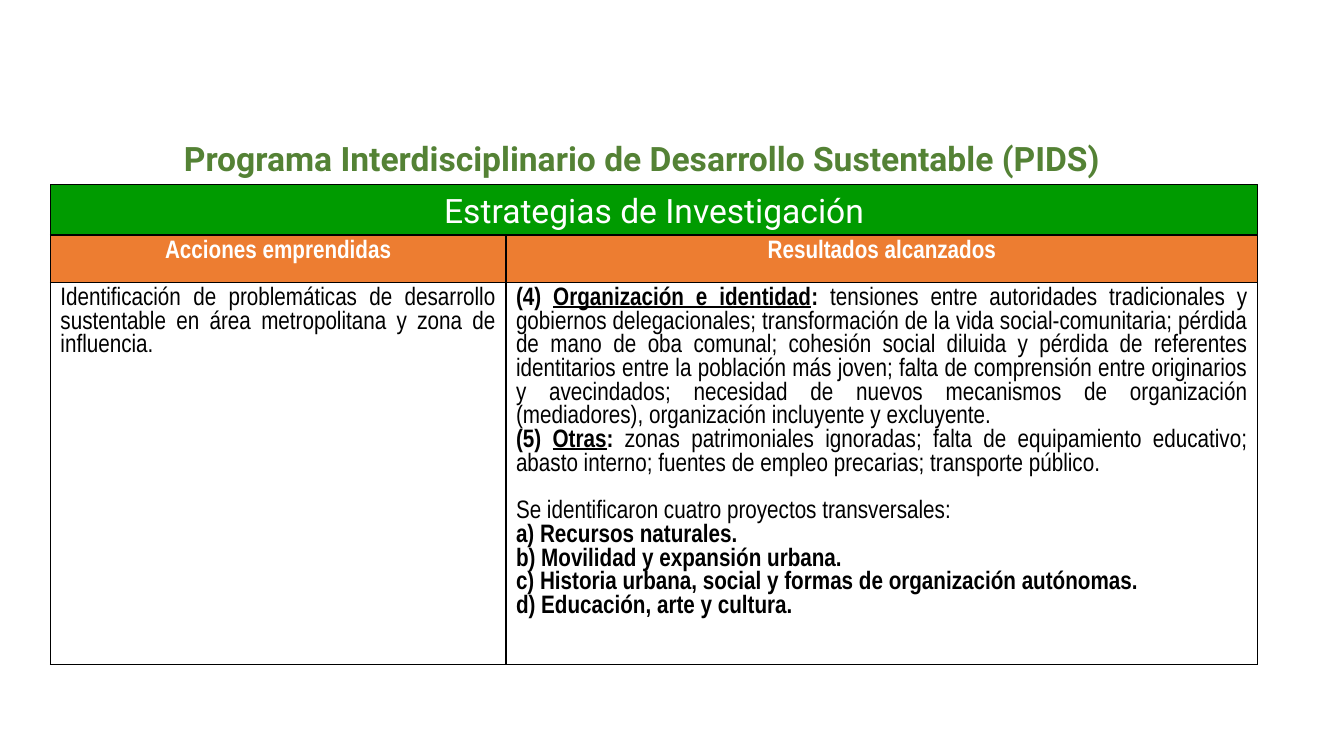
"""Build the PIDS slide: a title, a green banner and a table of actions and results."""
from pptx import Presentation
from pptx.dml.color import RGBColor
from pptx.enum.shapes import MSO_SHAPE
from pptx.enum.text import PP_ALIGN, MSO_ANCHOR
from pptx.oxml import parse_xml
from pptx.oxml.ns import nsdecls
from pptx.util import Cm, Pt

TITLE = "Programa Interdisciplinario de Desarrollo Sustentable (PIDS)"
BANNER = "Estrategias de Investigación"
HEADERS = ["Acciones emprendidas", "Resultados alcanzados"]
ACTIONS = ["Identificación de problemáticas de desarrollo sustentable en área "
           "metropolitana y zona de influencia."]
FINDINGS = [
    ("(4) ", "Organización e identidad",
     "tensiones entre autoridades tradicionales y gobiernos delegacionales; "
     "transformación de la vida social-comunitaria; pérdida de mano de oba comunal; "
     "cohesión social diluida y pérdida de referentes identitarios entre la población "
     "más joven; falta de comprensión entre originarios y avecindados; necesidad de "
     "nuevos mecanismos de organización (mediadores), organización incluyente y "
     "excluyente."),
    ("(5) ", "Otras",
     "zonas patrimoniales ignoradas; falta de equipamiento educativo; abasto interno; "
     "fuentes de empleo precarias; transporte público."),
]
PROJECTS_INTRO = "Se identificaron cuatro proyectos transversales:"
PROJECTS = [
    "a) Recursos naturales.",
    "b) Movilidad y expansión urbana.",
    "c) Historia urbana, social y formas de organización autónomas.",
    "d) Educación, arte y cultura.",
]

THEME = {
    "title": RGBColor(0x54, 0x82, 0x35), "banner": RGBColor(0x00, 0x9B, 0x00),
    "header": RGBColor(0xED, 0x7D, 0x31), "white": RGBColor(0xFF, 0xFF, 0xFF),
    "black": RGBColor(0, 0, 0), "display": "Roboto", "body": "Arial Narrow",
    "display_size": Pt(24), "body_size": Pt(18), "gap": Pt(16.9),
}

LEFT, BANNER_TOP, BANNER_H = Cm(1.27), Cm(4.65), Cm(1.27)
COLS = [Cm(11.48), Cm(18.95)]
ROWS = [Cm(1.19), Cm(9.63)]
WIDTH = sum(COLS)


def style(p, face, color, align, bold=False):
    """Set one paragraph's alignment and font from the theme."""
    p.alignment = align
    p.font.name, p.font.size = THEME[face], THEME[face + "_size"]
    p.font.color.rgb, p.font.bold = THEME[color], bold


def heading(sp, text, color, bold=False):
    """Fill a shape with one centred line of display type."""
    tf = sp.text_frame
    tf.word_wrap, tf.vertical_anchor = True, MSO_ANCHOR.TOP
    p = tf.paragraphs[0]
    p.text = text
    style(p, "display", color, PP_ALIGN.CENTER, bold)


def set_borders(cell):
    """Draw a thin black line on every side of a cell."""
    tc_pr = cell._tc.get_or_add_tcPr()
    for i, side in enumerate(("lnL", "lnR", "lnT", "lnB")):
        tc_pr.insert(i, parse_xml(
            f'<a:{side} {nsdecls("a")} w="{Pt(1)}"><a:solidFill>'
            f'<a:srgbClr val="{THEME["black"]}"/></a:solidFill></a:{side}>'))


def add_lines(tf, lines):
    """Write justified paragraphs, each a list of (text, bold, underline) runs."""
    for i, runs in enumerate(lines):
        p = tf.paragraphs[0] if i == 0 else tf.add_paragraph()
        style(p, "body", "black", PP_ALIGN.JUSTIFY)
        for text, bold, underline in runs:
            r = p.add_run()
            r.text = text
            r.font.bold, r.font.underline = bold, underline


def add_strategy_table(s):
    """Add the table of actions and results."""
    tbl = s.shapes.add_table(2, 2, LEFT, BANNER_TOP + BANNER_H, WIDTH, sum(ROWS)).table
    tbl.first_row = tbl.horz_banding = False
    for col, width in zip(tbl.columns, COLS):
        col.width = width
    for row, height in zip(tbl.rows, ROWS):
        row.height = height
    for cell in tbl.iter_cells():
        cell.fill.background()
        set_borders(cell)
    for cell, text in zip(tbl.rows[0].cells, HEADERS):
        cell.fill.solid()
        cell.fill.fore_color.rgb = THEME["header"]
        p = cell.text_frame.paragraphs[0]
        p.text = text
        style(p, "body", "white", PP_ALIGN.CENTER, True)

    findings = [[(num, True, False), (name, True, True), (": ", True, False),
                 (text, False, False)] for num, name, text in FINDINGS]
    projects = [[(text, True, False)] for text in PROJECTS]
    add_lines(tbl.cell(1, 0).text_frame, [[(text, False, False)] for text in ACTIONS])
    tf = tbl.cell(1, 1).text_frame
    add_lines(tf, findings + [[(PROJECTS_INTRO, False, False)]] + projects)
    tf.paragraphs[len(findings)].space_before = THEME["gap"]


def main():
    """Assemble and save the slide."""
    prs = Presentation()
    prs.slide_width, prs.slide_height = Cm(33.87), Cm(19.05)
    s = prs.slides.add_slide(prs.slide_layouts[6])
    add_strategy_table(s)

    banner = s.shapes.add_shape(MSO_SHAPE.RECTANGLE, LEFT, BANNER_TOP, WIDTH, BANNER_H)
    banner.shadow.inherit = False
    banner.fill.solid()
    banner.fill.fore_color.rgb = THEME["banner"]
    banner.line.color.rgb, banner.line.width = THEME["black"], Pt(0.75)
    heading(banner, BANNER, "white")

    title = s.shapes.add_textbox(Cm(2.08), Cm(3.35), Cm(28.19), Cm(1.27))
    heading(title, TITLE, "title", True)
    prs.save("out.pptx")


if __name__ == "__main__":
    main()
